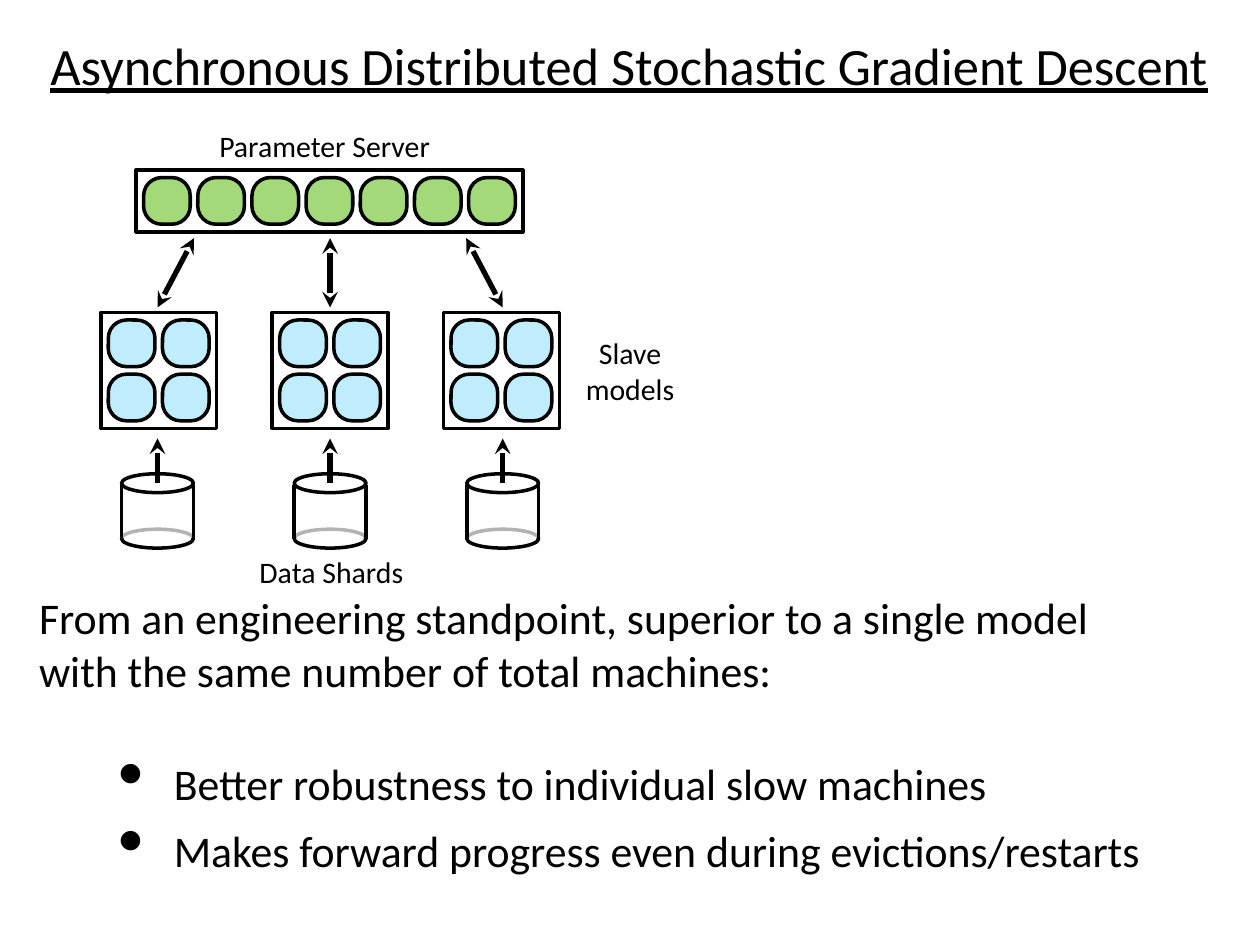
from dataclasses import dataclass
from lxml import etree
from pptx import Presentation, dml, util as u
from pptx.dml import color
from pptx.enum import shapes, text
from pptx.oxml import ns

FORM = shapes.MSO_SHAPE
LEFT, MID = text.PP_ALIGN.LEFT, text.PP_ALIGN.CENTER


@dataclass
class Theme:
    font: str = "Calibri"
    ink: str = "000000"
    paper: str = "FFFFFF"
    green: str = "A3D979"
    blue: str = "C0EDFE"
    title: int = 30
    body: int = 25
    label: int = 17
    thin: int = 2
    thick: int = 3


def tint(hue):
    return color.RGBColor.from_string(hue)


def add(node, tag, **attrs):
    return etree.SubElement(node, ns.qn(tag), attrs)


def write(frame, lines, theme, size, align=LEFT, line=False, gap=0, bullet=False):
    for i, words in enumerate(lines):
        para = frame.paragraphs[0] if i == 0 else frame.add_paragraph()
        if bullet:
            props = para._p.get_or_add_pPr()
            props.set("marL", str(u.Inches(0.68)))
            props.set("indent", str(u.Inches(-0.44)))
            add(props, "a:buSzPct", val="171000")
            add(props, "a:buChar", char="•")
        para.alignment = align
        if i:
            para.space_before = u.Pt(gap)
        run = para.add_run()
        run.text = words
        font = run.font
        font.name, font.size = theme.font, u.Pt(size)
        font.underline = line
        font.color.rgb = tint(theme.ink)


class Board:
    """Draws styled elements on the current slide."""

    def __init__(self, deck, theme):
        self.theme = theme
        self.slide = deck.slides.add_slide(deck.slide_layouts[6])

    def text(self, box, lines, size, wrap=True, inset=(0, 0, 0, 0),
             anchor=text.MSO_ANCHOR.MIDDLE, **style):
        frame = self.slide.shapes.add_textbox(*map(u.Inches, box)).text_frame
        frame.word_wrap = wrap
        frame.vertical_anchor = anchor
        (frame.margin_left, frame.margin_top,
         frame.margin_right, frame.margin_bottom) = map(u.Inches, inset)
        write(frame, lines, self.theme, size, **style)

    def shape(self, form, box, fill=None, alpha=None, line=True):
        item = self.slide.shapes.add_shape(form, *map(u.Inches, box))
        item.shadow.inherit = False
        if fill:
            item.fill.solid()
            item.fill.fore_color.rgb = tint(fill)
            if alpha:
                hue = item._element.spPr.find(".//" + ns.qn("a:srgbClr"))
                add(hue, "a:alpha", val=str(alpha * 1000))
        else:
            item.fill.background()
        if line:
            item.line.color.rgb = tint(self.theme.ink)
            item.line.width = u.Pt(self.theme.thin)
        else:
            item.line.fill.background()
        return item

    def line(self, start, end, width, ends=()):
        item = self.slide.shapes.add_connector(
            shapes.MSO_CONNECTOR.STRAIGHT, *map(u.Inches, (*start, *end)))
        item.line.color.rgb = tint(self.theme.ink)
        item.line.width = u.Pt(width)
        for end in ends:
            add(item.line._get_or_add_ln(), f"a:{end}End", type="stealth")
        add(item._element.spPr, "a:effectLst")

    def cells(self, left, top, cols, rows, fill):
        side, step, pad = 0.37, 0.43, 0.06
        for row in range(rows):
            for col in range(cols):
                spot = left + pad + col * step, top + pad + row * step
                cell = self.shape(FORM.ROUNDED_RECTANGLE, (*spot, side, side), fill)
                cell.adjustments[0] = 0.39
        size = [(n - 1) * step + side + 2 * pad for n in (cols, rows)]
        self.shape(FORM.RECTANGLE, (left, top, *size))

    def shard(self, mid):
        wide, theme = 0.57, self.theme
        left = mid - wide / 2
        self.shape(FORM.OVAL, (left, 4.2, wide, 0.15))
        self.shape(FORM.RECTANGLE, (left, 3.86, wide, 0.41), theme.paper, 70, False)
        self.shape(FORM.OVAL, (left, 3.76, wide, 0.15))
        for side in (left, left + wide):
            self.line((side, 3.85), (side, 4.28), theme.thin)
        self.line((mid, 3.48), (mid, 3.83), theme.thick, ["head"])


def main():
    deck = Presentation()
    deck.slide_width, deck.slide_height = u.Inches(10), u.Inches(7.5)
    theme = Theme()
    board = Board(deck, theme)
    board.text((0.07, 0.23, 9.85, 0.56),
               ["Asynchronous Distributed Stochastic Gradient Descent"],
               theme.title, align=MID, line=True)
    board.text((1.74, 1.01, 1.88, 0.29), ["Parameter Server"], theme.label, wrap=False)
    board.cells(1.08, 1.35, 7, 1, theme.green)
    for i, port in enumerate((1.54, 2.62, 3.7)):
        board.cells(0.8 + i * 1.36, 2.48, 2, 2, theme.blue)
        mid = 1.25 + i * 1.37
        board.line((port, 1.89), (mid, 2.44), theme.thick, ["head", "tail"])
        board.shard(mid)
    board.text((4.49, 2.63, 1.02, 0.62), ["Slave models"], theme.label, align=MID)
    board.text((1.84, 4.36, 1.58, 0.35), ["Data Shards"], theme.label, align=MID)
    board.text((0.31, 4.69, 8.91, 0.88),
               ["From an engineering standpoint, superior to a single model "
                "with the same number of total machines:"],
               theme.body, anchor=text.MSO_ANCHOR.TOP)
    board.text((0.63, 5.67, 9.06, 1.62),
               ["Better robustness to individual slow machines",
                "Makes forward progress even during evictions/restarts"],
               theme.body, inset=(0.07, 0.04, 0, 0.04), gap=8.4, bullet=True)
    deck.save("out.pptx")


if __name__ == "__main__":
    main()
